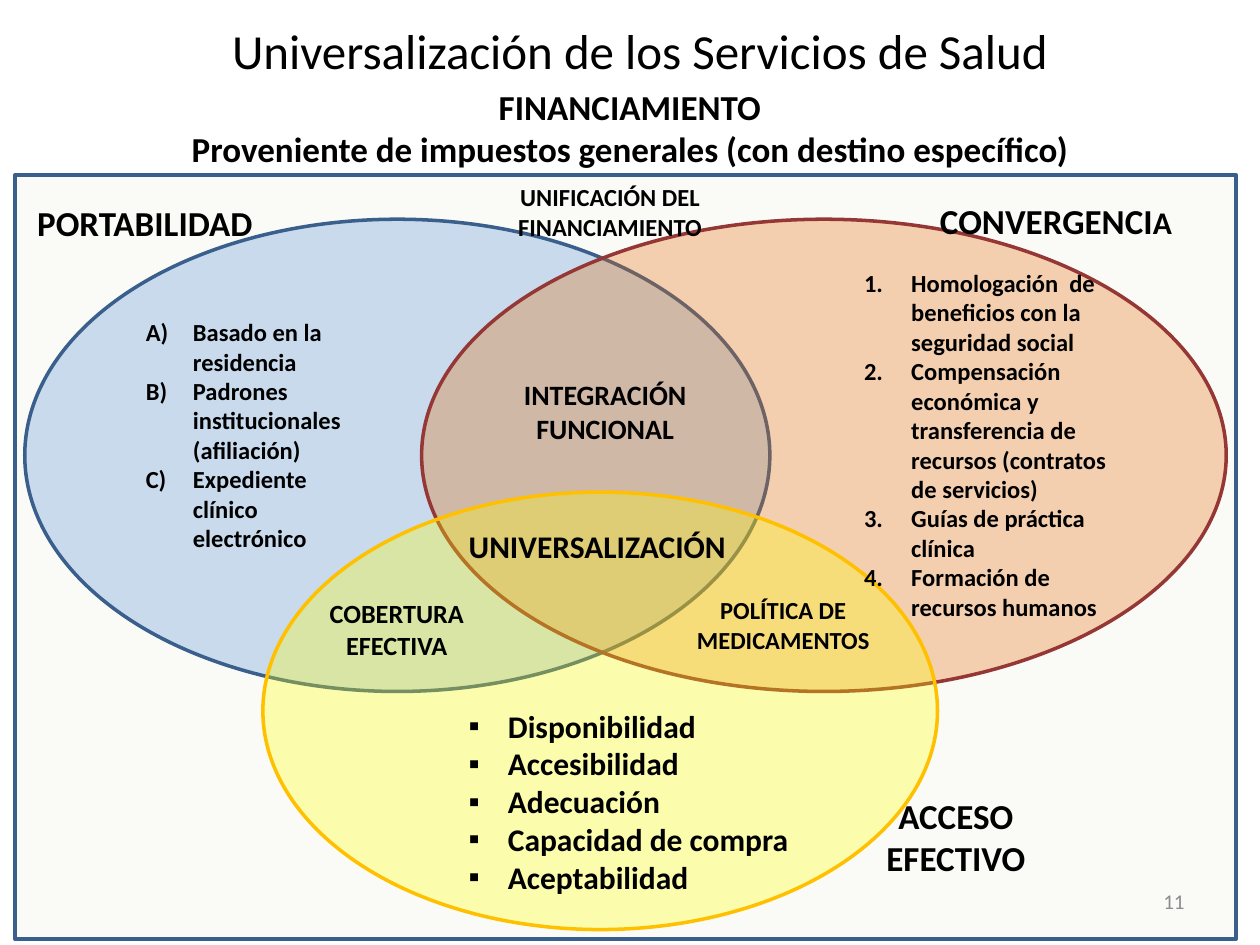
from dataclasses import dataclass

from lxml import etree
from pptx import Presentation
from pptx import util as u
from pptx.dml import color
from pptx.enum import shapes, text
from pptx.oxml import ns


@dataclass(frozen=True)
class Theme:
    """Colours, type sizes and font of the slide."""
    font: str = "Calibri"
    ink: str = "000000"
    grey: str = "8C8C8C"
    navy: str = "3A5F8C"
    blue: str = "558ED5"
    wine: str = "953735"
    rust: str = "E46C0A"
    gold: str = "FFC000"
    lemon: str = "FFFF00"
    pale: str = "EBF1DE"
    title: int = 28
    head: int = 20
    key: int = 18
    mid: int = 16
    pair: int = 15
    body: int = 14
    page: int = 12


T = Theme()
KIND = shapes.MSO_SHAPE
LEFT, MID, RIGHT = (text.PP_ALIGN.LEFT, text.PP_ALIGN.CENTER,
                    text.PP_ALIGN.RIGHT)


def rgb(code):
    """Turn a hex code into a colour."""
    return color.RGBColor.from_string(code)


def assign(item, vals):
    """Set every attribute named in a dict."""
    for name, val in vals.items():
        setattr(item, name, val)


def area(slide, kind, box, fill, line, alpha):
    """Draw an outlined shape with a see-through fill."""
    form = slide.shapes.add_shape(kind, *map(u.Cm, box))
    form.shadow.inherit = False
    form.fill.solid()
    form.fill.fore_color.rgb = rgb(fill)
    tone = form.fill._xPr.find(".//" + ns.qn("a:srgbClr"))
    etree.SubElement(tone, ns.qn("a:alpha"), val=str(alpha * 1000))
    form.line.color.rgb = rgb(line)
    form.line.width = u.Pt(2)


def write(par, words, size, tint=T.ink, bold=True):
    """Add one formatted run to a paragraph."""
    run = par.add_run()
    run.text = words
    assign(run.font, {"name": T.font, "size": u.Pt(size), "bold": bold})
    run.font.color.rgb = rgb(tint)


def label(slide, box, lines, size, align=MID, tint=T.ink, bold=True,
          anchor=text.MSO_ANCHOR.TOP):
    """Place a wrapped text box and return its paragraphs."""
    frame = slide.shapes.add_textbox(*map(u.Cm, box)).text_frame
    assign(frame, {"word_wrap": True, "vertical_anchor": anchor})
    for num, words in enumerate(lines):
        par = frame.add_paragraph() if num else frame.paragraphs[0]
        par.alignment = align
        write(par, words, size, tint, bold)
    return frame.paragraphs


def listing(slide, box, lines, size, dent, tag, mark):
    """Place a list with hanging numbers or bullets."""
    for par in label(slide, box, lines, size, LEFT):
        props = par._p.get_or_add_pPr()
        gap = u.Cm(dent)
        props.set("marL", str(gap))
        props.set("indent", str(-gap))
        if tag == "buChar":
            etree.SubElement(props, ns.qn("a:buFont"), typeface="Arial")
        etree.SubElement(props, ns.qn("a:" + tag), mark)


def venn(slide):
    """Draw the frame and the three overlapping ovals."""
    area(slide, KIND.RECTANGLE, (0.3, 3.53, 24.62, 15.4), T.pale, T.navy, 23)
    for box, fill, line in (
        ((0.5, 4.42, 15.02, 9.52), T.blue, T.navy),
        ((8.5, 4.42, 16.22, 9.52), T.rust, T.wine),
        ((5.3, 9.92, 13.6, 8.82), T.lemon, T.gold),
    ):
        area(slide, KIND.OVAL, box, fill, line, 30)


def lists(slide):
    """Place the lists inside the ovals."""
    listing(slide, (2.69, 6.27, 5, 5.64), (
        "Basado en la residencia",
        "Padrones institucionales (afiliación)",
        "Expediente clínico electrónico",
    ), T.body, 0.95, "buAutoNum", {"type": "alphaUcParenR"})
    listing(slide, (17.17, 5.28, 6, 8.64), (
        "Homologación  de beneficios con la seguridad social",
        "Compensación económica y transferencia de recursos "
        "(contratos de servicios)",
        "Guías de práctica clínica",
        "Formación de recursos humanos",
    ), T.body, 0.95, "buAutoNum", {"type": "arabicPeriod"})
    listing(slide, (9.2, 14.12, 7.5, 4.11), (
        "Disponibilidad", "Accesibilidad", "Adecuación",
        "Capacidad de compra", "Aceptabilidad",
    ), T.key, 0.79, "buChar", {"char": "▪"})


def labels(slide):
    """Place the names of the ovals and their overlaps."""
    label(slide, (9.2, 10.49, 5.8, 1.02), ["UNIVERSALIZACIÓN"], T.key, LEFT)
    label(slide, (0.5, 3.93, 5, 1.12), ["PORTABILIDAD"], T.head, LEFT)
    pars = label(slide, (18.7, 3.9, 5.6, 1.12), ["CONVERGENCI"], T.head, LEFT)
    write(pars[0], "A", T.key)
    for box, lines, size in (
        ((9.9, 7.49, 4.6, 1.63), ["INTEGRACIÓN FUNCIONAL"], T.mid),
        ((13.49, 11.88, 4.6, 1.45), ["POLÍTICA DE MEDICAMENTOS"], T.body),
        ((5.7, 11.92, 4.6, 1.55), ["COBERTURA", "EFECTIVA"], T.pair),
        ((16.67, 15.9, 5.2, 1.96), ["ACCESO EFECTIVO"], T.head),
        ((0.5, 1.6, 24.4, 1.96), [
            "FINANCIAMIENTO",
            "Proveniente de impuestos generales (con destino específico)",
        ], T.head),
        ((9.5, 3.55, 5.6, 1.45), ["UNIFICACIÓN DEL FINANCIAMIENTO"], T.body),
    ):
        label(slide, box, lines, size)


def main():
    """Build the slide and save it."""
    deck = Presentation()
    assign(deck, {"slide_width": u.Cm(25.4), "slide_height": u.Cm(19.05)})
    slide = deck.slides.add_slide(deck.slide_layouts[6])
    venn(slide)
    lists(slide)
    labels(slide)
    plain = {"bold": False, "anchor": text.MSO_ANCHOR.MIDDLE}
    label(slide, (2.1, 0.1, 21.6, 1.8),
          ["Universalización de los Servicios de Salud"], T.title, **plain)
    label(slide, (18.2, 17.65, 5.93, 1.02), ["11"], T.page, RIGHT, T.grey,
          **plain)
    deck.save("out.pptx")


if __name__ == "__main__":
    main()
